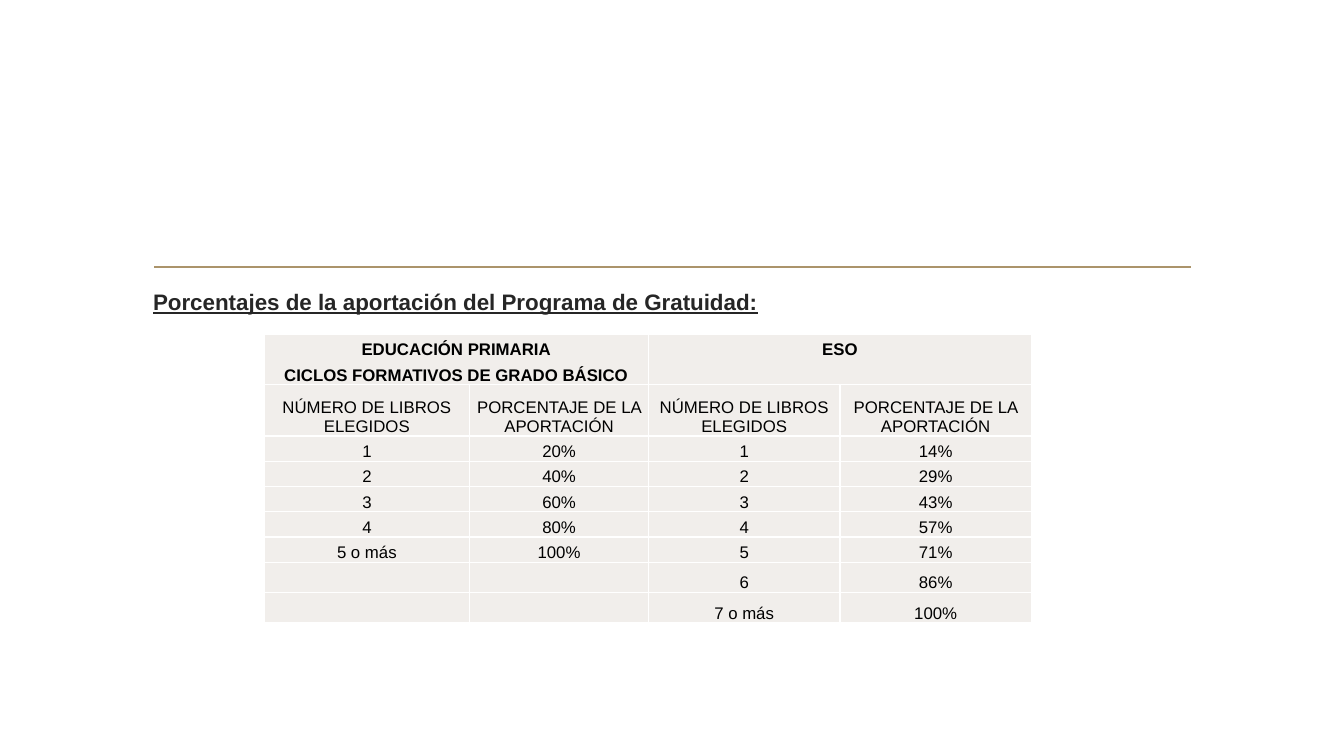
from lxml import etree
from pptx import Presentation
from pptx.dml.color import RGBColor
from pptx.enum.shapes import MSO_CONNECTOR
from pptx.enum.text import MSO_ANCHOR, PP_ALIGN
from pptx.oxml.ns import qn
from pptx.util import Inches, Pt

STRAIGHT = MSO_CONNECTOR.STRAIGHT
CENTER = PP_ALIGN.CENTER
TOP, BOTTOM = MSO_ANCHOR.TOP, MSO_ANCHOR.BOTTOM

SLIDE_WIDTH, SLIDE_HEIGHT = Inches(13.33), Inches(7.5)
FONT = "Arial"
COLORS = {
    "rule": "AB946B",
    "heading": "262626",
    "text": "000000",
    "cell": "F1EEEB",
    "border": "FFFFFF",
}

HEADING = "Porcentajes de la aportación del Programa de Gratuidad:"
STAGES = [["EDUCACIÓN PRIMARIA", "CICLOS FORMATIVOS DE GRADO BÁSICO"], ["ESO"]]
COLUMN_TITLES = ["NÚMERO DE LIBROS ELEGIDOS", "PORCENTAJE DE LA APORTACIÓN"] * 2
CONTRIBUTIONS = [
    ["1", "20%", "1", "14%"],
    ["2", "40%", "2", "29%"],
    ["3", "60%", "3", "43%"],
    ["4", "80%", "4", "57%"],
    ["5 o más", "100%", "5", "71%"],
    ["", "", "6", "86%"],
    ["", "", "7 o más", "100%"],
]
COLUMN_SHARES = [15.3, 13.3, 14.25, 14.25]
ROW_SHARES = [6.67, 6.8] + [3.33] * len(CONTRIBUTIONS)


def across(percent):
    """Return a share of the slide width."""
    return round(SLIDE_WIDTH * percent / 100)


def down(percent):
    """Return a share of the slide height."""
    return round(SLIDE_HEIGHT * percent / 100)


def add_run(paragraph, text, size, color, bold=False, underline=False):
    """Add one formatted run to a paragraph."""
    run = paragraph.add_run()
    run.text = text
    run.font.name = FONT
    run.font.size = Pt(size)
    run.font.bold = bold
    run.font.underline = underline
    run.font.color.rgb = RGBColor.from_string(COLORS[color])


def add_rule(slide):
    """Draw the horizontal rule above the heading."""
    rule = slide.shapes.add_connector(
        STRAIGHT, across(11.48), down(35.33), across(88.6), down(35.33))
    rule.line.color.rgb = RGBColor.from_string(COLORS["rule"])
    rule.line.width = Pt(1.25)
    etree.SubElement(rule._element.spPr, qn("a:effectLst"))


def add_heading(slide):
    """Add the underlined heading."""
    box = slide.shapes.add_textbox(
        across(10.65), down(37.47), across(78.77), down(48.4))
    box.text_frame.word_wrap = True
    paragraph = box.text_frame.paragraphs[0]
    paragraph.space_after = Pt(6)
    add_run(paragraph, HEADING, 16, "heading", bold=True, underline=True)


def add_borders(cell):
    """Give a cell a thin border on all four sides."""
    properties = cell._tc.get_or_add_tcPr()
    for index, side in enumerate(("lnL", "lnR", "lnT", "lnB")):
        line = etree.Element(qn(f"a:{side}"), w=str(Pt(1)))
        fill = etree.SubElement(line, qn("a:solidFill"))
        etree.SubElement(fill, qn("a:srgbClr"), val=COLORS["border"])
        properties.insert(index, line)


def style_cell(cell):
    """Set the fill, borders, margins and anchor of a cell."""
    add_borders(cell)
    cell.fill.solid()
    cell.fill.fore_color.rgb = RGBColor.from_string(COLORS["cell"])
    cell.margin_left = cell.margin_right = Inches(0.05)
    cell.margin_top = cell.margin_bottom = 0
    cell.vertical_anchor = BOTTOM


def write_cell(cell, lines, bold=False, spacing=Pt(18)):
    """Write centred lines into a cell, one paragraph each."""
    frame = cell.text_frame
    for index, text in enumerate(lines):
        paragraph = frame.add_paragraph() if index else frame.paragraphs[0]
        paragraph.alignment = CENTER
        paragraph.line_spacing = spacing
        if text:
            add_run(paragraph, text, 12, "text", bold=bold)


def add_contribution_table(slide):
    """Add the table of contributions by number of books."""
    table = slide.shapes.add_table(
        len(ROW_SHARES), len(COLUMN_SHARES), across(19.65), down(44.2),
        across(sum(COLUMN_SHARES)), down(sum(ROW_SHARES))).table
    table.first_row = table.horz_banding = False
    for column, share in zip(table.columns, COLUMN_SHARES):
        column.width = across(share)
    for row, share in zip(table.rows, ROW_SHARES):
        row.height = down(share)
    for cell in table.iter_cells():
        style_cell(cell)

    for index, lines in enumerate(STAGES):
        stage = table.cell(0, 2 * index)
        stage.merge(table.cell(0, 2 * index + 1))
        stage.vertical_anchor = TOP
        write_cell(stage, lines, bold=True)
    for column, title in enumerate(COLUMN_TITLES):
        write_cell(table.cell(1, column), [title], spacing=1.0)
    for row, values in enumerate(CONTRIBUTIONS, start=2):
        for column, value in enumerate(values):
            write_cell(table.cell(row, column), [value])


def main():
    """Build the slide and save the presentation."""
    presentation = Presentation()
    presentation.slide_width = SLIDE_WIDTH
    presentation.slide_height = SLIDE_HEIGHT
    slide = presentation.slides.add_slide(presentation.slide_layouts[6])
    add_rule(slide)
    add_heading(slide)
    add_contribution_table(slide)
    presentation.save("out.pptx")


if __name__ == "__main__":
    main()
